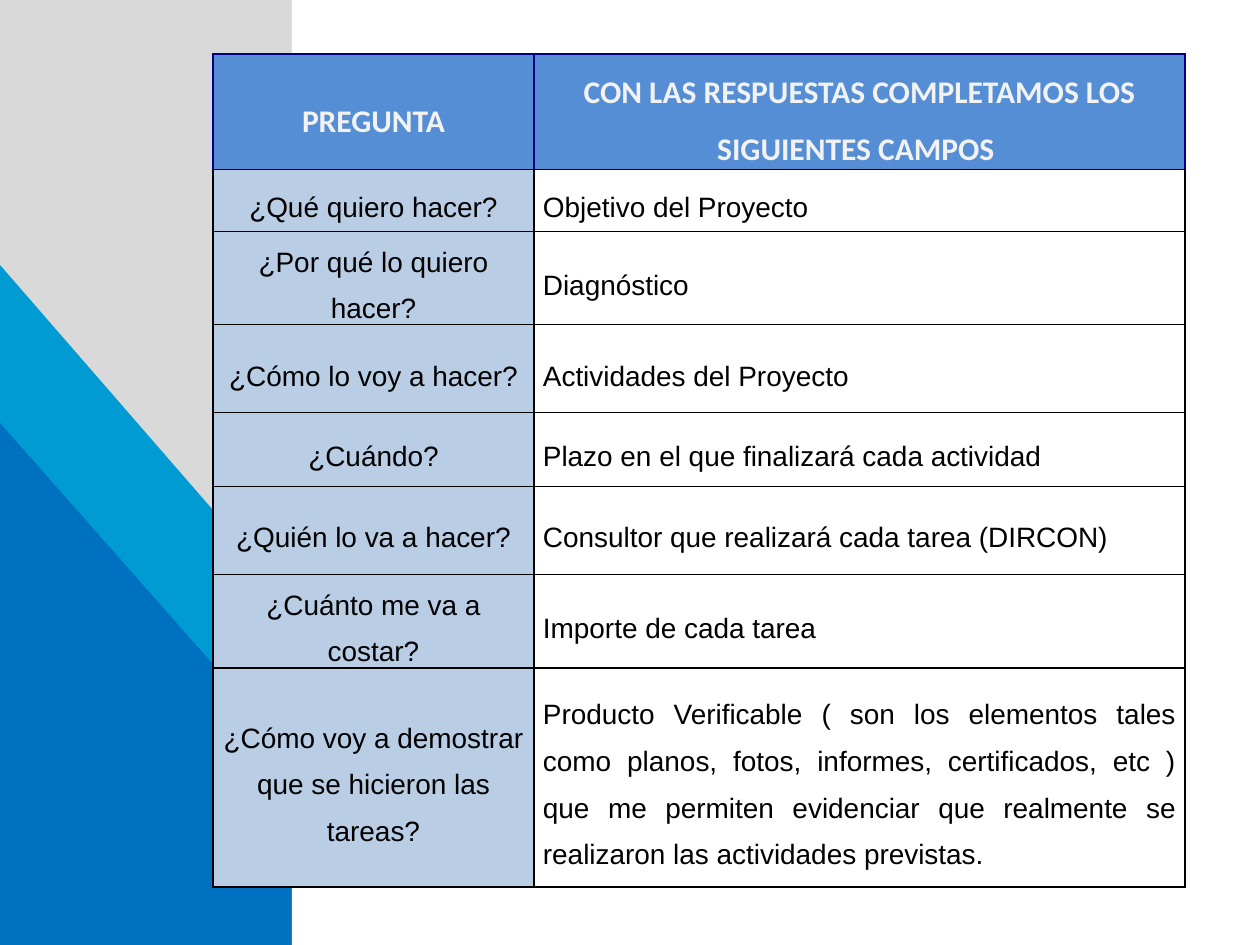
from lxml.etree import SubElement
from pptx import Presentation
from pptx.dml.color import RGBColor
from pptx.enum.shapes import MSO_SHAPE
from pptx.enum.text import MSO_ANCHOR, PP_ALIGN
from pptx.oxml.ns import qn
from pptx.util import Pt

EMU_PER_PX = 914400 / 126
PAGE_WIDTH, PAGE_HEIGHT = 1260, 945

WHITE = RGBColor(0xFF, 0xFF, 0xFF)
BLACK = RGBColor(0x00, 0x00, 0x00)
NAVY = RGBColor(0x00, 0x00, 0x80)
GRAY = RGBColor(0xD9, 0xD9, 0xD9)
CYAN = RGBColor(0x00, 0x9B, 0xD2)
BLUE = RGBColor(0x00, 0x70, 0xC0)
HEADER_FILL = RGBColor(0x55, 0x8E, 0xD5)
HEADER_TEXT = RGBColor(0xF2, 0xF2, 0xF2)
QUESTION_FILL = RGBColor(0xB9, 0xCD, 0xE5)

COLUMN_WIDTHS = (321, 651)
HEADER_HEIGHT = 98
HEADINGS = ("PREGUNTA", "CON LAS RESPUESTAS COMPLETAMOS LOS SIGUIENTES CAMPOS ")
QUESTIONS = (
    (62, "¿Qué quiero hacer?", "Objetivo del Proyecto"),
    (88, "¿Por qué lo quiero hacer?", "Diagnóstico"),
    (88, "¿Cómo lo voy a hacer?", "Actividades del Proyecto"),
    (74, "¿Cuándo?", "Plazo en el que finalizará cada actividad"),
    (88, "¿Quién lo va a hacer?", "Consultor que realizará cada tarea (DIRCON)"),
    (88, "¿Cuánto me va a costar?", "Importe de cada tarea"),
    (219, "¿Cómo voy a demostrar que se hicieron las tareas?",
     "Producto Verificable ( son los elementos tales como planos, fotos, informes, "
     "certificados, etc ) que me permiten evidenciar que realmente se realizaron "
     "las actividades previstas."),
)


def px(length):
    """Turn a length in px into EMU."""
    return round(length * EMU_PER_PX)


def add_flat_shape(page, kind, box, color):
    """Add a preset shape with a plain fill and no outline."""
    shape = page.shapes.add_shape(kind, *map(px, box))
    shape.shadow.inherit = False
    shape.fill.solid()
    shape.fill.fore_color.rgb = color
    shape.line.fill.background()


def add_backdrop(page, box):
    """Draw the side band with its two diagonals and the white content area."""
    left, top, width, height = box
    band = 292
    add_flat_shape(page, MSO_SHAPE.RECTANGLE, (left, top, band, height), GRAY)
    for run, rise, color in ((591, 680, CYAN), (461, 522, BLUE)):
        triangle = (left, top + height - rise, run, rise)
        add_flat_shape(page, MSO_SHAPE.RIGHT_TRIANGLE, triangle, color)
    add_flat_shape(page, MSO_SHAPE.RECTANGLE,
                   (left + band, top, width - band, height), WHITE)


def set_borders(cell, colors):
    """Give the left, right, top and bottom edges 1 pt lines ahead of the fill."""
    properties = cell._tc.get_or_add_tcPr()
    for position, (edge, color) in enumerate(zip(("lnL", "lnR", "lnT", "lnB"), colors)):
        line = SubElement(properties, qn(f"a:{edge}"), w=str(Pt(1)))
        fill = SubElement(line, qn("a:solidFill"))
        SubElement(fill, qn("a:srgbClr"), val=str(color))
        properties.insert(position, line)


def fill_cell(cell, text, align, fill, font_name, size, color, bold):
    """Write one cell with its margins, fill and text style."""
    cell.margin_left = cell.margin_right = px(9)
    cell.margin_top = cell.margin_bottom = 0
    cell.vertical_anchor = MSO_ANCHOR.MIDDLE
    if fill is None:
        cell.fill.background()
    else:
        cell.fill.solid()
        cell.fill.fore_color.rgb = fill
    cell.text = text
    para = cell.text_frame.paragraphs[0]
    para.alignment = align
    para.line_spacing = 1.5
    para.font.name = font_name
    para.font.size = Pt(size)
    para.font.bold = bold
    para.font.color.rgb = color


def add_question_table(page, left, top):
    """Place the table that pairs each question with the field it completes."""
    heights = [HEADER_HEIGHT] + [height for height, *_ in QUESTIONS]
    frame = page.shapes.add_table(len(heights), len(COLUMN_WIDTHS), px(left), px(top),
                                  px(sum(COLUMN_WIDTHS)), px(sum(heights)))
    table = frame.table
    table.first_row = table.horz_banding = False
    for column, width in zip(table.columns, COLUMN_WIDTHS):
        column.width = px(width)
    for row, height in zip(table.rows, heights):
        row.height = px(height)

    for cell, heading in zip(table.rows[0].cells, HEADINGS):
        fill_cell(cell, heading, PP_ALIGN.CENTER, HEADER_FILL,
                  "Calibri", 18, HEADER_TEXT, True)
        set_borders(cell, (NAVY, NAVY, NAVY, BLACK))
    styles = ((PP_ALIGN.CENTER, QUESTION_FILL), (PP_ALIGN.JUSTIFY, None))
    for index, (_, *texts) in enumerate(QUESTIONS, start=1):
        for cell, text, (align, fill) in zip(table.rows[index].cells, texts, styles):
            fill_cell(cell, text, align, fill, "Arial", 16, BLACK, False)
            set_borders(cell, (BLACK,) * 4)


def main():
    """Build the deck and save it."""
    deck = Presentation()
    deck.slide_width, deck.slide_height = px(PAGE_WIDTH), px(PAGE_HEIGHT)
    page = deck.slides.add_slide(deck.slide_layouts[6])
    add_backdrop(page, (0, 0, PAGE_WIDTH, PAGE_HEIGHT))
    add_question_table(page, 213, 54)
    deck.save("out.pptx")


if __name__ == "__main__":
    main()
